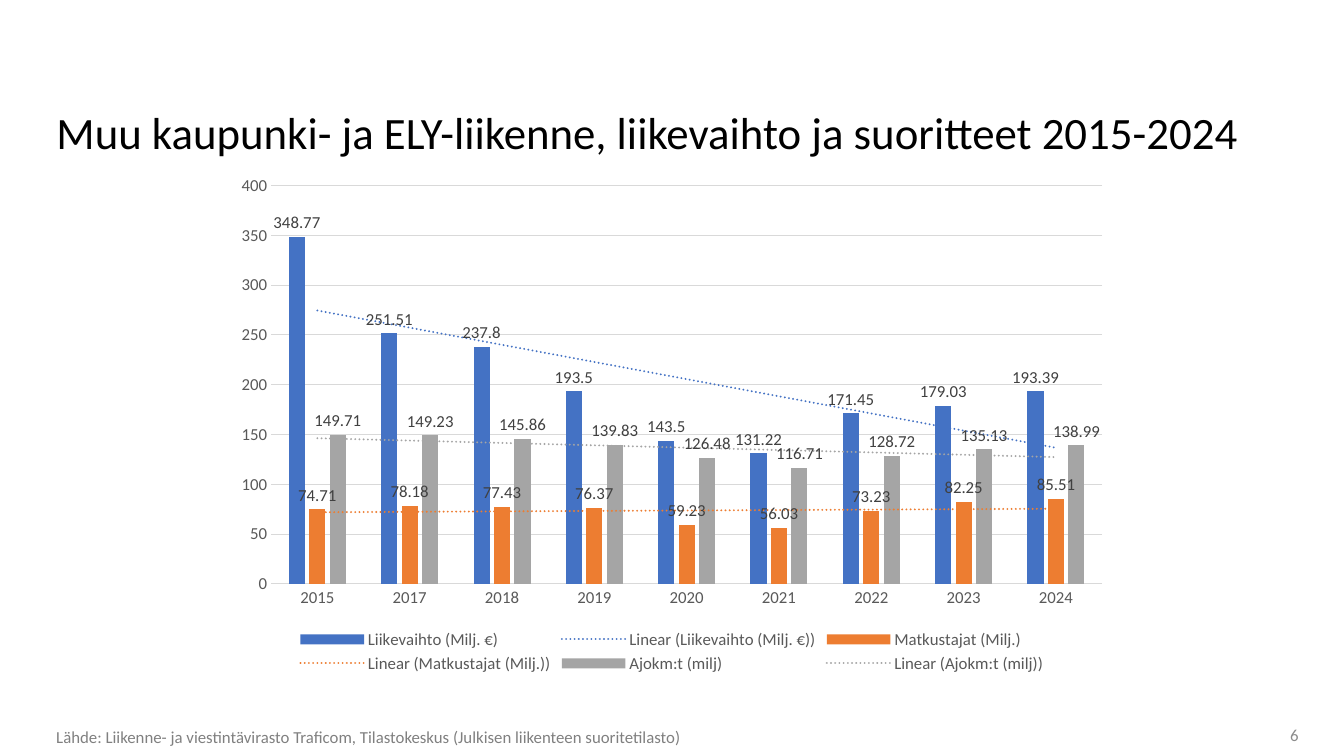
from pptx import Presentation
from pptx.chart.data import CategoryChartData
from pptx.dml.color import RGBColor
from pptx.enum.chart import XL_CHART_TYPE, XL_LABEL_POSITION, XL_LEGEND_POSITION, XL_TICK_MARK
from pptx.enum.text import MSO_ANCHOR, MSO_AUTO_SIZE, PP_ALIGN
from pptx.oxml import parse_xml
from pptx.oxml.ns import nsdecls, qn
from pptx.util import Inches, Pt

COLUMNS = XL_CHART_TYPE.COLUMN_CLUSTERED
OUTSIDE_END = XL_LABEL_POSITION.OUTSIDE_END
BOTTOM_LEGEND = XL_LEGEND_POSITION.BOTTOM
NO_TICKS = XL_TICK_MARK.NONE
MIDDLE, BOTTOM = MSO_ANCHOR.MIDDLE, MSO_ANCHOR.BOTTOM
LEFT, RIGHT = PP_ALIGN.LEFT, PP_ALIGN.RIGHT
NO_AUTOFIT = MSO_AUTO_SIZE.NONE

YEARS = ["2015", "2017", "2018", "2019", "2020", "2021", "2022", "2023", "2024"]
SERIES = [
    ("Liikevaihto (Milj. €)", "4472C4",
     [348.77, 251.51, 237.8, 193.5, 143.5, 131.22, 171.45, 179.03, 193.39]),
    ("Matkustajat (Milj.)", "ED7D31",
     [74.71, 78.18, 77.43, 76.37, 59.23, 56.03, 73.23, 82.25, 85.51]),
    ("Ajokm:t (milj)", "A5A5A5",
     [149.71, 149.23, 145.86, 139.83, 126.48, 116.71, 128.72, 135.13, 138.99]),
]


def color(value):
    return RGBColor.from_string(value)


class SlideBuilder:
    font_name = "Calibri"
    small = 12
    axis_color = "595959"
    grid_color = "D9D9D9"
    label_color = "404040"

    def __init__(self, deck):
        self.deck = deck
        self.page = deck.slides.add_slide(deck.slide_layouts[5])

    def area(self, left, top, width, height):
        """Turn percentages of the slide into lengths."""
        wide, high = self.deck.slide_width, self.deck.slide_height
        return [round(share * side / 100) for share, side in
                ((left, wide), (top, high), (width, wide), (height, high))]

    def style(self, font, size, shade):
        font.name = self.font_name
        font.size = Pt(size)
        font.color.rgb = color(shade)

    def set_text(self, box, text, size, shade, anchor, align=LEFT, spacing=1.0):
        frame = box.text_frame
        frame.word_wrap = True
        frame.auto_size = NO_AUTOFIT
        frame.vertical_anchor = anchor
        para = frame.paragraphs[0]
        para.alignment = align
        para.line_spacing = spacing
        span = para.add_run()
        span.text = text
        self.style(span.font, size, shade)
        return frame

    def title(self, text, *shares):
        box = self.page.shapes.title
        box.left, box.top, box.width, box.height = self.area(*shares)
        self.set_text(box, text, 32, "000000", BOTTOM, spacing=0.9)

    def note(self, text, shade, *shares, **options):
        box = self.page.shapes.add_textbox(*self.area(*shares))
        return self.set_text(box, text, self.small, shade, MIDDLE, **options)

    def add_trend(self, series, shade):
        trend = parse_xml(
            f'<c:trendline {nsdecls("c", "a")}><c:spPr>'
            f'<a:ln w="{Pt(1.5)}" cap="rnd"><a:solidFill><a:srgbClr val="{shade}"/></a:solidFill>'
            '<a:prstDash val="sysDot"/></a:ln></c:spPr>'
            '<c:trendlineType val="linear"/><c:dispRSqr val="0"/><c:dispEq val="0"/>'
            '</c:trendline>')
        series._element.find(qn("c:cat")).addprevious(trend)

    def column_chart(self, categories, rows, *shares):
        data = CategoryChartData()
        data.categories = categories
        for name, _, values in rows:
            data.add_series(name, values)
        chart = self.page.shapes.add_chart(COLUMNS, *self.area(*shares), data).chart
        self.style(chart.font, 10, "000000")
        chart.has_title = False

        # Axes and gridlines
        for axis in (chart.category_axis, chart.value_axis):
            axis.major_tick_mark = axis.minor_tick_mark = NO_TICKS
            self.style(axis.tick_labels.font, self.small, self.axis_color)
        chart.value_axis.format.line.fill.background()
        chart.value_axis.has_major_gridlines = True
        for line in (chart.category_axis.format.line,
                     chart.value_axis.major_gridlines.format.line):
            line.color.rgb = color(self.grid_color)
            line.width = Pt(0.75)

        # Legend
        chart.has_legend = True
        chart.legend.position = BOTTOM_LEGEND
        chart.legend.include_in_layout = False
        self.style(chart.legend.font, self.small, self.axis_color)

        # Columns, value labels and trend lines
        plot = chart.plots[0]
        plot.gap_width, plot.overlap, plot.vary_by_categories = 219, -27, False
        for series, (_, shade, _) in zip(plot.series, rows):
            series.invert_if_negative = False
            series.format.fill.solid()
            series.format.fill.fore_color.rgb = color(shade)
            labels = series.data_labels
            labels.show_value = True
            labels.position = OUTSIDE_END
            self.style(labels.font, self.small, self.label_color)
            self.add_trend(series, shade)


def main():
    deck = Presentation()
    deck.slide_width, deck.slide_height = Inches(13.33), Inches(7.5)
    slide = SlideBuilder(deck)

    # Heading
    slide.title("Muu kaupunki- ja ELY-liikenne, liikevaihto ja suoritteet 2015-2024",
                3.45, 13.33, 93.17, 8.4)
    # Turnover and performance by year
    slide.column_chart(YEARS, SERIES, 16.65, 21.87, 66.69, 67.73)
    # Source line and page number
    slide.note("Lähde: Liikenne- ja viestintävirasto Traficom, Tilastokeskus "
               "(Julkisen liikenteen suoritetilasto)",
               "808080", 3.45, 95.87, 88.6, 3.47, spacing=0.9)
    number = slide.note("6", "8C8C8C", 90.4, 95.2, 6.23, 4, align=RIGHT)
    number.margin_right = 0

    deck.save("out.pptx")


if __name__ == "__main__":
    main()
